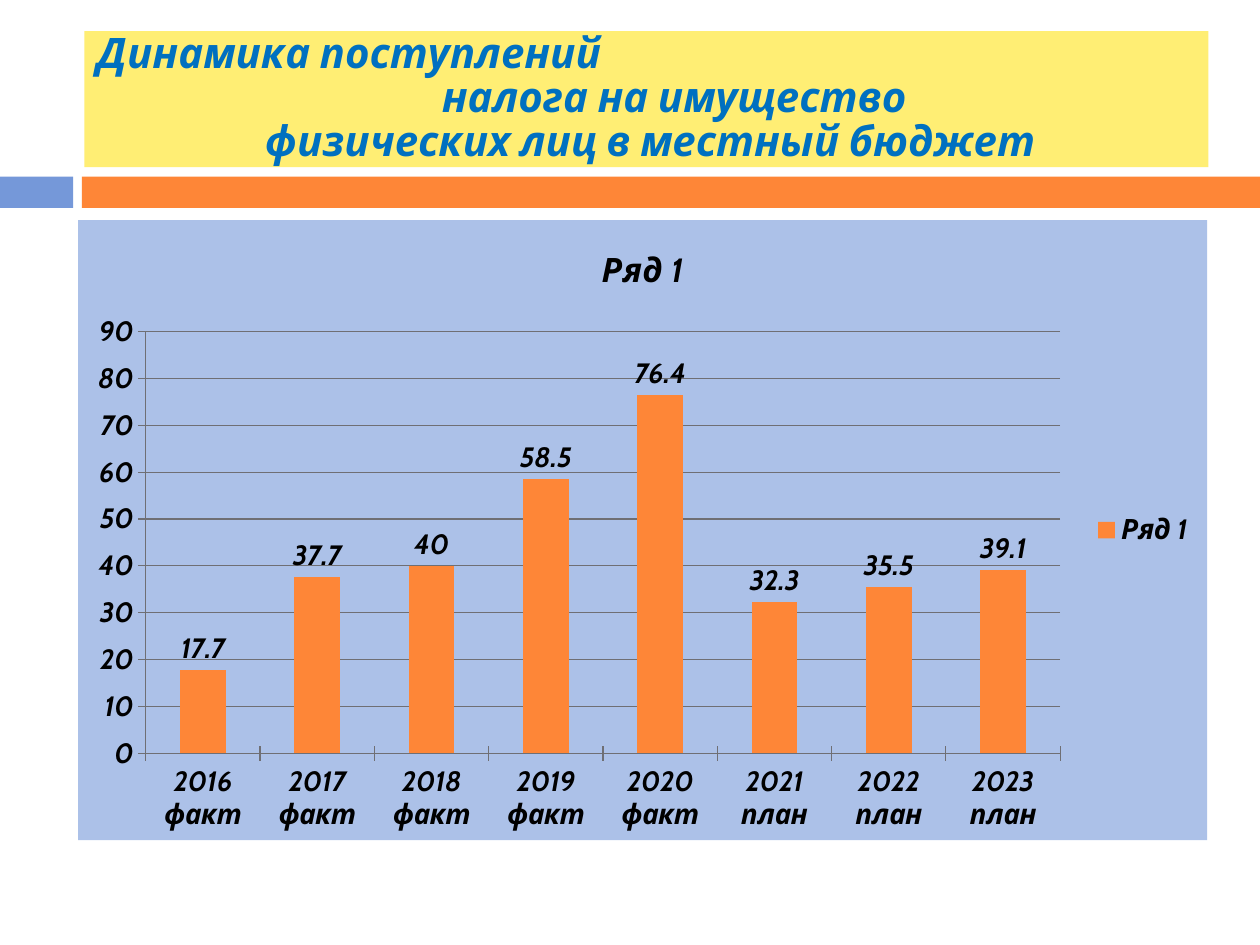
from lxml import etree
from pptx import Presentation
from pptx import util as u
from pptx.chart import data as chart_data
from pptx.dml.color import RGBColor
from pptx.enum import chart as ch, shapes, text
from pptx.oxml import ns

# Content
HEADING = [  # wording, alignment, left indent as a share of slide width
    ("Динамика поступлений", text.PP_ALIGN.LEFT, 0),
    ("налога на имущество", text.PP_ALIGN.CENTER, 0.044),
    ("физических лиц в местный бюджет", text.PP_ALIGN.CENTER, 0.006),
]
SERIES = "Ряд 1"
RECEIPTS = [
    ("2016 факт", 17.7), ("2017 факт", 37.7), ("2018 факт", 40), ("2019 факт", 58.5),
    ("2020 факт", 76.4), ("2021 план", 32.3), ("2022 план", 35.5), ("2023 план", 39.1),
]

THEME = {
    "font": "Cabin", "heading_size": 24, "chart_title_size": 19.2, "chart_size": 16,
    "heading": "0070C0", "heading_fill": "FFEE74", "accent": "FE8637", "tab": "7598D9",
    "chart_fill": "ACC1E8", "ink": "000000", "grid": "6F6F74",
}
WIDTH, HEIGHT = 10, 7.5

# Places as shares of the slide: left, top, width, height
BAND_TOP, BAND_HEIGHT = 0.187, 0.033
TAB = (0, BAND_TOP, 0.058, BAND_HEIGHT)
BAND = (0.065, BAND_TOP, 0.935, BAND_HEIGHT)
HEADING_BOX = (0.067, 0.033, 0.892, 0.144)
CHART_BOX = (0.062, 0.233, 0.896, 0.656)
PLOT = {"x": 0.06, "y": 0.18, "w": 0.81, "h": 0.68}  # shares of the chart


def colour(name):
    return RGBColor.from_string(THEME[name])


def place(box):
    return [u.Inches(share * side) for share, side in zip(box, (WIDTH, HEIGHT) * 2)]


def style(font, size, ink):
    font.name, font.size, font.bold, font.italic = THEME["font"], u.Pt(THEME[size]), True, True
    font.color.rgb = colour(ink)


def add_block(slide, box, fill):
    block = slide.shapes.add_shape(shapes.MSO_SHAPE.RECTANGLE, *place(box))
    block.shadow.inherit = False
    block.fill.solid()
    block.fill.fore_color.rgb = colour(fill)
    block.line.fill.background()
    return block


def add_heading(slide):
    frame = add_block(slide, HEADING_BOX, "heading_fill").text_frame
    frame.word_wrap = True
    frame.vertical_anchor = text.MSO_ANCHOR.MIDDLE
    for index, (wording, alignment, indent) in enumerate(HEADING):
        line = frame.add_paragraph() if index else frame.paragraphs[0]
        line.alignment, line.line_spacing = alignment, 0.88
        line._p.get_or_add_pPr().set("marL", str(u.Inches(indent * WIDTH)))
        run = line.add_run()
        run.text = wording
        style(run.font, "heading_size", "heading")


def fill_chart_area(chart):
    area = etree.Element(ns.qn("c:spPr"))
    fill = etree.SubElement(area, ns.qn("a:solidFill"))
    etree.SubElement(fill, ns.qn("a:srgbClr"), val=THEME["chart_fill"])
    edge = etree.SubElement(area, ns.qn("a:ln"))
    etree.SubElement(edge, ns.qn("a:noFill"))
    chart._chartSpace.chart.addnext(area)


def fix_plot_area(chart):
    plot_area = chart._chartSpace.chart.plotArea
    for old in plot_area.findall(ns.qn("c:layout")):
        plot_area.remove(old)
    layout = etree.Element(ns.qn("c:layout"))
    manual = etree.SubElement(layout, ns.qn("c:manualLayout"))
    settings = {"layoutTarget": "inner", "xMode": "edge", "yMode": "edge", **PLOT}
    for tag, value in settings.items():
        etree.SubElement(manual, ns.qn(f"c:{tag}"), val=str(value))
    plot_area.insert(0, layout)


def add_receipts(slide):
    receipts = chart_data.CategoryChartData()
    receipts.categories = [year for year, _ in RECEIPTS]
    receipts.add_series(SERIES, [amount for _, amount in RECEIPTS])
    chart = slide.shapes.add_chart(
        ch.XL_CHART_TYPE.COLUMN_CLUSTERED, *place(CHART_BOX), receipts).chart
    style(chart.font, "chart_size", "ink")
    fill_chart_area(chart)
    fix_plot_area(chart)

    # Title and legend
    chart.has_title = True
    title = chart.chart_title.text_frame.paragraphs[0].add_run()
    title.text = SERIES
    style(title.font, "chart_title_size", "ink")
    chart.has_legend = True
    chart.legend.position = ch.XL_LEGEND_POSITION.RIGHT
    chart.legend.include_in_layout = False

    # Axes
    amounts = chart.value_axis
    amounts.minimum_scale, amounts.maximum_scale, amounts.major_unit = 0, 90, 10
    amounts.has_major_gridlines = True
    for axis in (chart.category_axis, amounts):
        axis.major_tick_mark = ch.XL_TICK_MARK.CROSS
    for ruled in (chart.category_axis, amounts, amounts.major_gridlines):
        ruled.format.line.color.rgb = colour("grid")
        ruled.format.line.width = u.Pt(0.75)

    # Columns and their labels
    columns = chart.plots[0]
    columns.vary_by_categories = False
    columns.gap_width = 150
    fill = columns.series[0].format.fill
    fill.solid()
    fill.fore_color.rgb = colour("accent")
    labels = columns.series[0].data_labels
    labels.show_value = True
    labels.position = ch.XL_LABEL_POSITION.OUTSIDE_END
    style(labels.font, "chart_size", "ink")


def main():
    deck = Presentation()
    deck.slide_width, deck.slide_height = u.Inches(WIDTH), u.Inches(HEIGHT)
    slide = deck.slides.add_slide(deck.slide_layouts[6])
    add_block(slide, TAB, "tab")
    add_block(slide, BAND, "accent")
    add_heading(slide)
    add_receipts(slide)
    deck.save("out.pptx")


if __name__ == "__main__":
    main()
